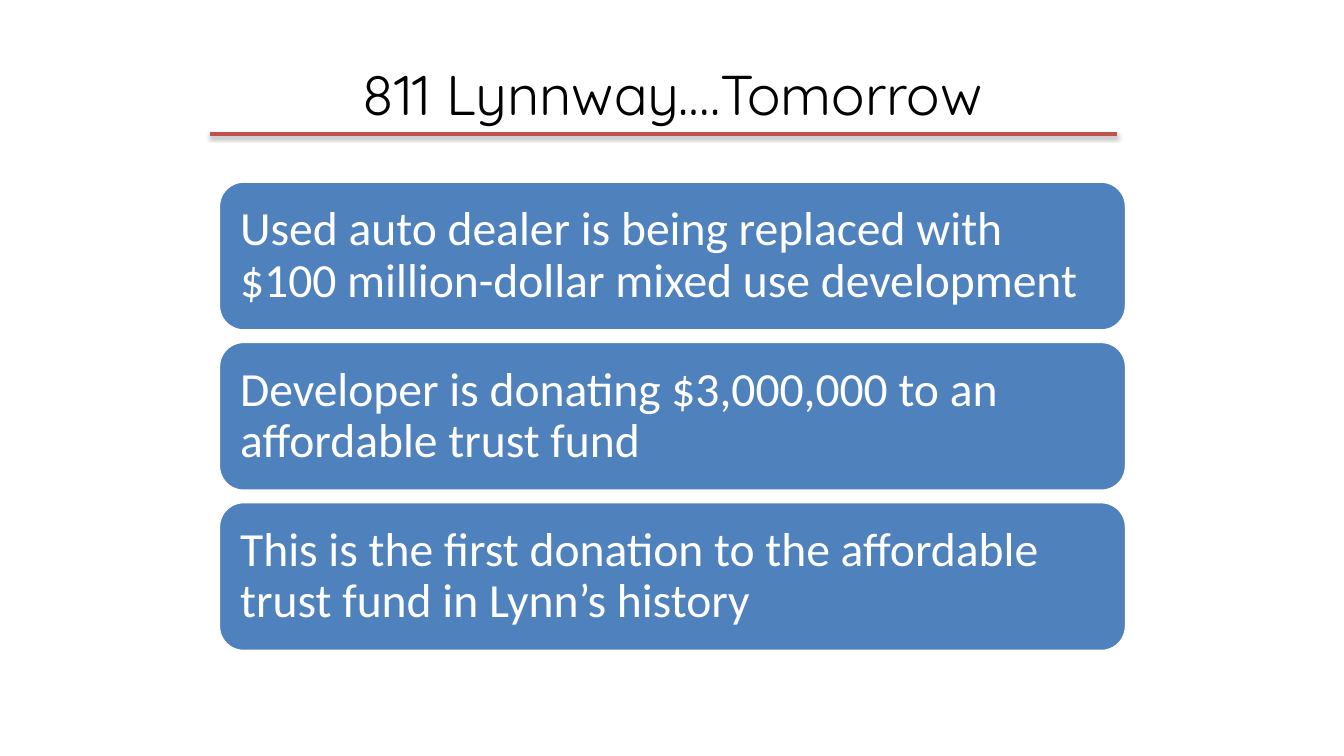
from dataclasses import dataclass

from lxml import etree
from pptx import Presentation
from pptx import util as u
from pptx.dml.color import RGBColor
from pptx.enum import shapes, text
from pptx.oxml import ns

COLORS = {
    "title": "000000",
    "card": "4F81BD",
    "card_text": "FFFFFF",
    "rule": "C0504D",
    "shadow": "000000",
}
CARD_LEFT, CARD_TOP, CARD_WIDTH, CARD_HEIGHT = 2.17, 1.8, 9, 1.48
CARD_PITCH = 1.59
CARD_INSET = 0.14


@dataclass
class Card:
    message: str
    top: float


def color(name: str) -> RGBColor:
    return RGBColor.from_string(COLORS[name])


def add_run(p, words: str, font: str, size: float, color_name: str) -> None:
    r = p.add_run()
    r.text = words
    r.font.name = font
    r.font.size = u.Pt(size)
    r.font.color.rgb = color(color_name)


def add_title(s, words: str) -> None:
    sp = s.shapes.title
    sp.left, sp.top = u.Inches(0.67), u.Inches(0.3)
    sp.width, sp.height = u.Inches(12), u.Inches(1.25)
    tf = sp.text_frame
    tf.vertical_anchor = text.MSO_ANCHOR.MIDDLE
    p = tf.paragraphs[0]
    p.alignment = text.PP_ALIGN.CENTER
    add_run(p, words, "Quicksand", 40, "title")


def add_card(s, card: Card) -> None:
    sp = s.shapes.add_shape(
        shapes.MSO_SHAPE.ROUNDED_RECTANGLE,
        u.Inches(CARD_LEFT), u.Inches(card.top),
        u.Inches(CARD_WIDTH), u.Inches(CARD_HEIGHT),
    )
    sp.shadow.inherit = False
    sp.fill.solid()
    sp.fill.fore_color.rgb = color("card")
    sp.line.color.rgb = color("card_text")
    sp.line.width = u.Pt(2)
    tf = sp.text_frame
    tf.word_wrap = True
    tf.vertical_anchor = text.MSO_ANCHOR.MIDDLE
    tf.margin_left = tf.margin_right = u.Inches(CARD_INSET)
    tf.margin_top = tf.margin_bottom = u.Inches(CARD_INSET)
    p = tf.paragraphs[0]
    p.alignment = text.PP_ALIGN.LEFT
    p.line_spacing = 0.9
    add_run(p, card.message, "Calibri", 34, "card_text")


def add_title_rule(s) -> None:
    rule = s.shapes.add_connector(
        shapes.MSO_CONNECTOR.STRAIGHT,
        u.Inches(2.08), u.Inches(1.33), u.Inches(11.08), u.Inches(1.33),
    )
    rule.line.color.rgb = color("rule")
    rule.line.width = u.Pt(3)
    sp_pr = rule.element.find(ns.qn("p:spPr"))
    effects = etree.SubElement(sp_pr, ns.qn("a:effectLst"))
    shadow = etree.SubElement(
        effects, ns.qn("a:outerShdw"),
        blurRad=str(u.Pt(3.1)), dist=str(u.Pt(1.8)), dir="5400000", rotWithShape="0",
    )
    tint = etree.SubElement(shadow, ns.qn("a:srgbClr"), val=COLORS["shadow"])
    etree.SubElement(tint, ns.qn("a:alpha"), val="35000")


def main() -> None:
    prs = Presentation()
    prs.slide_width, prs.slide_height = u.Inches(13.33), u.Inches(7.5)
    s = prs.slides.add_slide(prs.slide_layouts[5])
    add_title(s, "811 Lynnway….Tomorrow")
    messages = [
        "Used auto dealer is being replaced with $100 million-dollar mixed use development",
        "Developer is donating $3,000,000 to an affordable trust fund",
        "This is the first donation to the affordable trust fund in Lynn’s history",
    ]
    for i, message in enumerate(messages):
        add_card(s, Card(message, CARD_TOP + i * CARD_PITCH))
    add_title_rule(s)
    prs.save("out.pptx")


if __name__ == "__main__":
    main()
